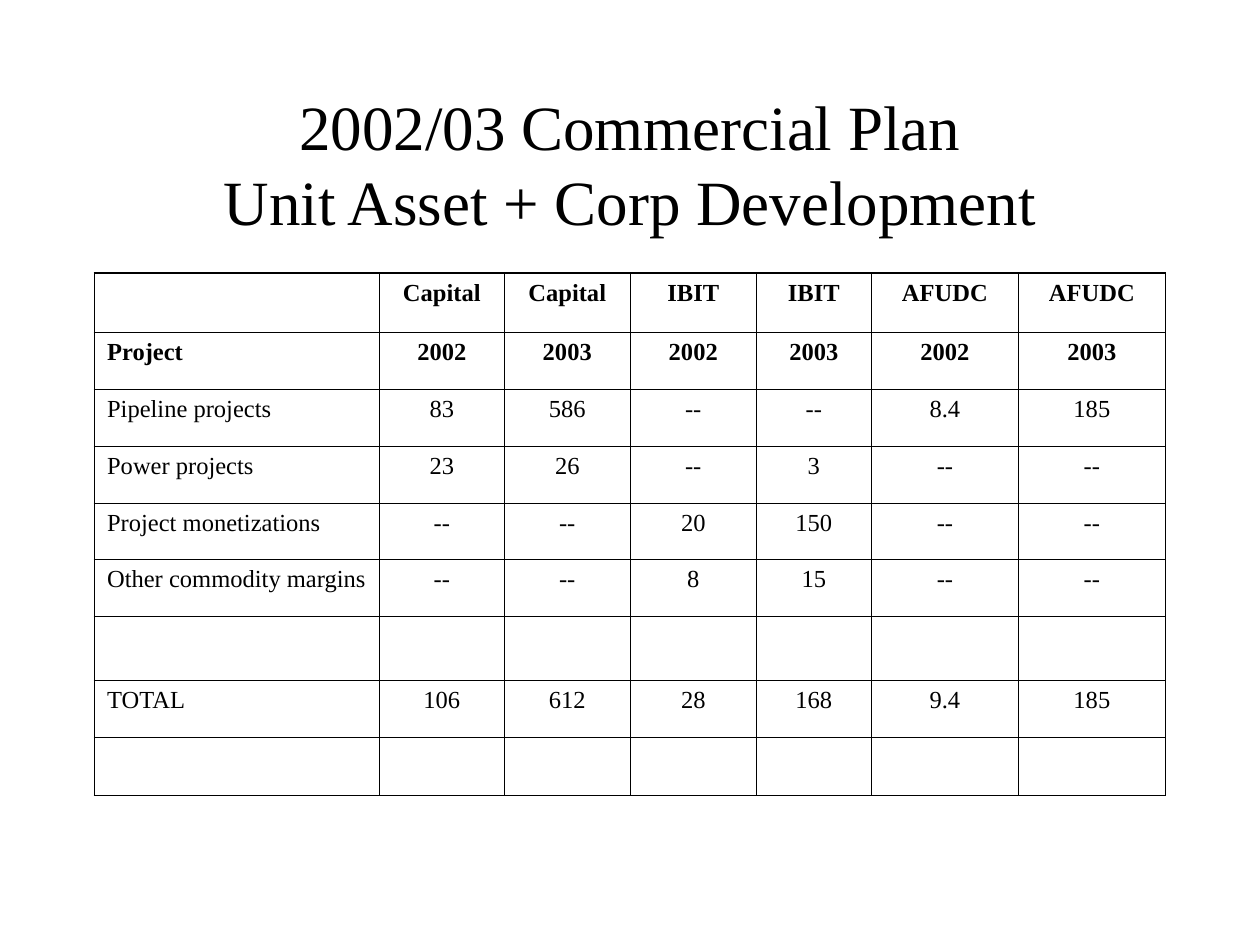
from dataclasses import dataclass

from lxml.etree import SubElement
from pptx import Presentation
from pptx.dml.color import RGBColor
from pptx.enum.text import MSO_ANCHOR as Anchor, PP_ALIGN as Align
from pptx.oxml.ns import qn
from pptx.util import Pt

BLACK = RGBColor(0, 0, 0)
FACE = "Times New Roman"
THIN, THICK = 0.45, 1.08
WIDTHS = [162.8, 71.4, 72, 72, 65.8, 84, 84]
DASH = "--"


@dataclass
class Row:
    cells: tuple = ("",) * 7
    high: float = 32.4
    bold: bool = False


ROWS = [
    Row(("", "Capital", "Capital", "IBIT", "IBIT", "AFUDC", "AFUDC"), 34.2, True),
    Row(("Project", *("2002", "2003") * 3), bold=True),
    Row(("Pipeline projects", "83", "586", DASH, DASH, "8.4", "185")),
    Row(("Power projects", "23", "26", DASH, "3", DASH, DASH)),
    Row(("Project monetizations", DASH, DASH, "20", "150", DASH, DASH)),
    Row(("Other commodity margins", DASH, DASH, "8", "15", DASH, DASH)),
    Row(high=36.6),
    Row(("TOTAL", "106", "612", "28", "168", "9.4", "185")),
    Row(high=33.4),
]


def write(frame, text: str, *, size: float, bold: bool = False,
          align=Align.CENTER, before: float = 0) -> None:
    frame.word_wrap = True
    frame.text = text
    para = frame.paragraphs[0]
    para.alignment = align
    para.space_before = Pt(before)
    for run in para.runs:
        font = run.font
        font.name, font.size, font.bold = FACE, Pt(size), bold
        font.color.rgb = BLACK


def edge(cell, side: str, width: float) -> None:
    line = SubElement(cell._tc.get_or_add_tcPr(), qn(f"a:ln{side}"), w=str(Pt(width)))
    fill = SubElement(line, qn("a:solidFill"))
    SubElement(fill, qn("a:srgbClr"), val=str(BLACK))


def draw_title(slide) -> None:
    box = slide.shapes.add_textbox(Pt(54), Pt(48), Pt(612), Pt(90))
    box.text_frame.vertical_anchor = Anchor.MIDDLE
    write(box.text_frame, "2002/03 Commercial Plan\vUnit Asset + Corp Development", size=36)


def draw_table(slide, rows: list[Row]) -> None:
    high = sum(row.high for row in rows)
    shape = slide.shapes.add_table(
        len(rows), len(WIDTHS), Pt(54), Pt(156), Pt(sum(WIDTHS)), Pt(high))
    table = shape.table
    table.first_row = table.horz_banding = False
    for col, width in zip(table.columns, WIDTHS):
        col.width = Pt(width)
    for y, row in enumerate(rows):
        table.rows[y].height = Pt(row.high)
        for x, text in enumerate(row.cells):
            cell = table.cell(y, x)
            outer = {"L": x == 0, "R": x == len(WIDTHS) - 1,
                     "T": y == 0, "B": y == len(rows) - 1}
            for side, rim in outer.items():
                edge(cell, side, THICK if rim else THIN)
            cell.fill.background()
            if text:
                write(cell.text_frame, text, size=14, bold=row.bold, before=3.5,
                      align=Align.CENTER if x else Align.LEFT)


def main() -> None:
    deck = Presentation()
    deck.slide_width, deck.slide_height = Pt(720), Pt(540)
    slide = deck.slides.add_slide(deck.slide_layouts[6])
    draw_title(slide)
    draw_table(slide, ROWS)
    deck.save("out.pptx")


if __name__ == "__main__":
    main()
